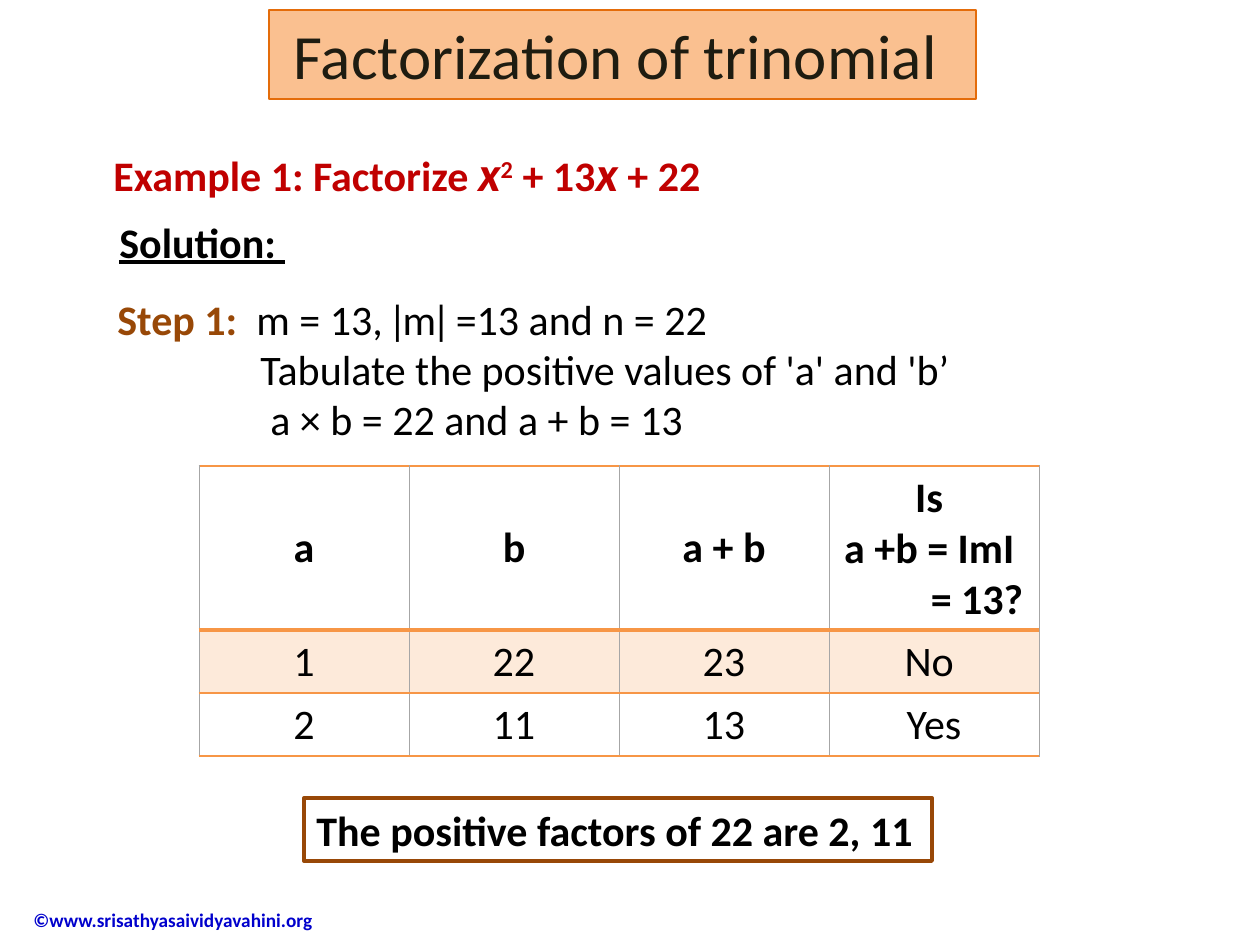
from dataclasses import dataclass

from lxml.etree import SubElement
from pptx import Presentation
from pptx.dml.color import RGBColor
from pptx.enum.shapes import MSO_SHAPE
from pptx.enum.text import MSO_ANCHOR, PP_ALIGN
from pptx.oxml.ns import qn
from pptx.util import Emu, Pt


@dataclass(frozen=True)
class Theme:
    font: str = "Calibri"
    title_size: int = 36
    body_size: int = 24
    variable_size: int = 28
    footer_size: int = 11
    black: str = "000000"
    title_text: str = "1E1C11"
    title_fill: str = "FAC090"
    title_line: str = "E46C0A"
    example: str = "C00000"
    brown: str = "984807"
    footer: str = "0000CC"
    grid: str = "F79646"
    divider: str = "A6A6A6"
    band: str = "FDEADA"


THEME = Theme()


def px(count):
    return Emu(round(count * 914400 / 126))


def rgb(value):
    return RGBColor.from_string(value)


def style(font, color=THEME.black, size=THEME.body_size, bold=False):
    font.name = THEME.font
    font.size = Pt(size)
    font.bold = bold
    font.color.rgb = rgb(color)


def outline(shape, color, width):
    shape.line.color.rgb = rgb(color)
    shape.line.width = Pt(width)


def add_text(page, box, text="", wrap=False, **look):
    shape = page.shapes.add_textbox(*map(px, box))
    shape.text_frame.word_wrap = wrap
    para = shape.text_frame.paragraphs[0]
    para.text = text
    style(para.font, **look)
    return shape.text_frame


def add_span(para, text):
    span = para.add_run()
    span.text = text
    return span


def add_title(page, box):
    title = page.shapes.title
    title.left, title.top, title.width, title.height = map(px, box)
    title.fill.solid()
    title.fill.fore_color.rgb = rgb(THEME.title_fill)
    outline(title, THEME.title_line, 0.75)
    title.text_frame.word_wrap = False
    title.text_frame.vertical_anchor = MSO_ANCHOR.MIDDLE
    para = title.text_frame.paragraphs[0]
    para.text = "Factorization of trinomial "
    para.alignment = PP_ALIGN.CENTER
    style(para.font, THEME.title_text, THEME.title_size)


def add_example(page, box):
    para = add_text(page, box, color=THEME.example, bold=True).paragraphs[0]
    for text in ("Example 1: Factorize ", "x", "2", " + 13", "x", " + 22"):
        span = add_span(para, text)
        style(span.font, THEME.example, bold=True)
        if text == "x":
            span.font.italic = True
            span.font.size = Pt(THEME.variable_size)
        elif text == "2":
            span.font._element.set("baseline", "30000")


def add_solution(page, box):
    frame = add_text(page, box, "Solution: ", bold=True)
    frame.paragraphs[0].font.underline = True


def add_step(page, box):
    frame = add_text(page, box, wrap=True)
    first = frame.paragraphs[0]
    style(add_span(first, "Step 1:  ").font, THEME.brown, bold=True)
    style(add_span(first, "m = 13, ǀmǀ =13 and n = 22").font)
    lines = (
        (143, "Tabulate the positive values of 'a' and 'b’"),
        (153, "a × b = 22 and a + b = 13"),
    )
    for indent, text in lines:
        para = frame.add_paragraph()
        para.text = text
        para._p.get_or_add_pPr().set("marL", str(px(indent)))
        style(para.font)


def set_borders(cell, bottom_width):
    properties = cell._tc.get_or_add_tcPr()
    edges = (
        ("a:lnL", THEME.divider, 0.5),
        ("a:lnR", THEME.divider, 0.5),
        ("a:lnT", THEME.grid, 1),
        ("a:lnB", THEME.grid, bottom_width),
    )
    for position, (tag, color, width) in enumerate(edges):
        line = SubElement(properties, qn(tag), w=str(Pt(width)))
        properties.insert(position, line)
        fill = SubElement(line, qn("a:solidFill"))
        SubElement(fill, qn("a:srgbClr"), val=color)


def add_factor_table(page, box):
    rows = (
        ("a", "b", "a + b", "Is \na +b = ImI \n= 13?"),
        ("1", "22", "23", "No "),
        ("2", "11", "13", "Yes"),
    )
    table = page.shapes.add_table(len(rows), len(rows[0]), *map(px, box)).table
    for row, height in zip(table.rows, (164, 63, 63)):
        row.height = px(height)
    for row_index, texts in enumerate(rows):
        header = row_index == 0
        for column_index, text in enumerate(texts):
            cell = table.cell(row_index, column_index)
            cell.text = text
            cell.vertical_anchor = MSO_ANCHOR.MIDDLE
            if row_index == 1:
                cell.fill.solid()
                cell.fill.fore_color.rgb = rgb(THEME.band)
            else:
                cell.fill.background()
            set_borders(cell, 2 if header else 1)
            for para in cell.text_frame.paragraphs:
                para.alignment = PP_ALIGN.CENTER
                style(para.font, bold=header)
    last_line = table.cell(0, 3).text_frame.paragraphs[-1]
    last_line._p.get_or_add_pPr().set("marL", str(px(86)))


def add_conclusion(page, box):
    shape = page.shapes.add_shape(MSO_SHAPE.RECTANGLE, *map(px, box))
    shape.shadow.inherit = False
    shape.fill.background()
    outline(shape, THEME.brown, 2.25)
    shape.text_frame.word_wrap = False
    shape.text_frame.vertical_anchor = MSO_ANCHOR.TOP
    para = shape.text_frame.paragraphs[0]
    para.text = "The positive factors of 22 are 2, 11"
    para.alignment = PP_ALIGN.LEFT
    style(para.font, bold=True)


def add_footer(page, box):
    frame = add_text(page, box, "©www.srisathyasaividyavahini.org", wrap=True,
                     color=THEME.footer, size=THEME.footer_size, bold=True)
    frame.vertical_anchor = MSO_ANCHOR.MIDDLE


def main():
    deck = Presentation()
    deck.slide_width, deck.slide_height = px(1260), px(945)
    page = deck.slides.add_slide(deck.slide_layouts[5])
    add_footer(page, (21, 895, 317, 50))
    add_example(page, (101, 136, 616, 72))
    add_solution(page, (107, 210, 193, 63))
    add_step(page, (105, 287, 1104, 165))
    add_factor_table(page, (199, 466, 840, 290))
    add_conclusion(page, (304, 798, 628, 63))
    add_title(page, (269, 10, 707, 89))
    deck.save("out.pptx")


if __name__ == "__main__":
    main()
